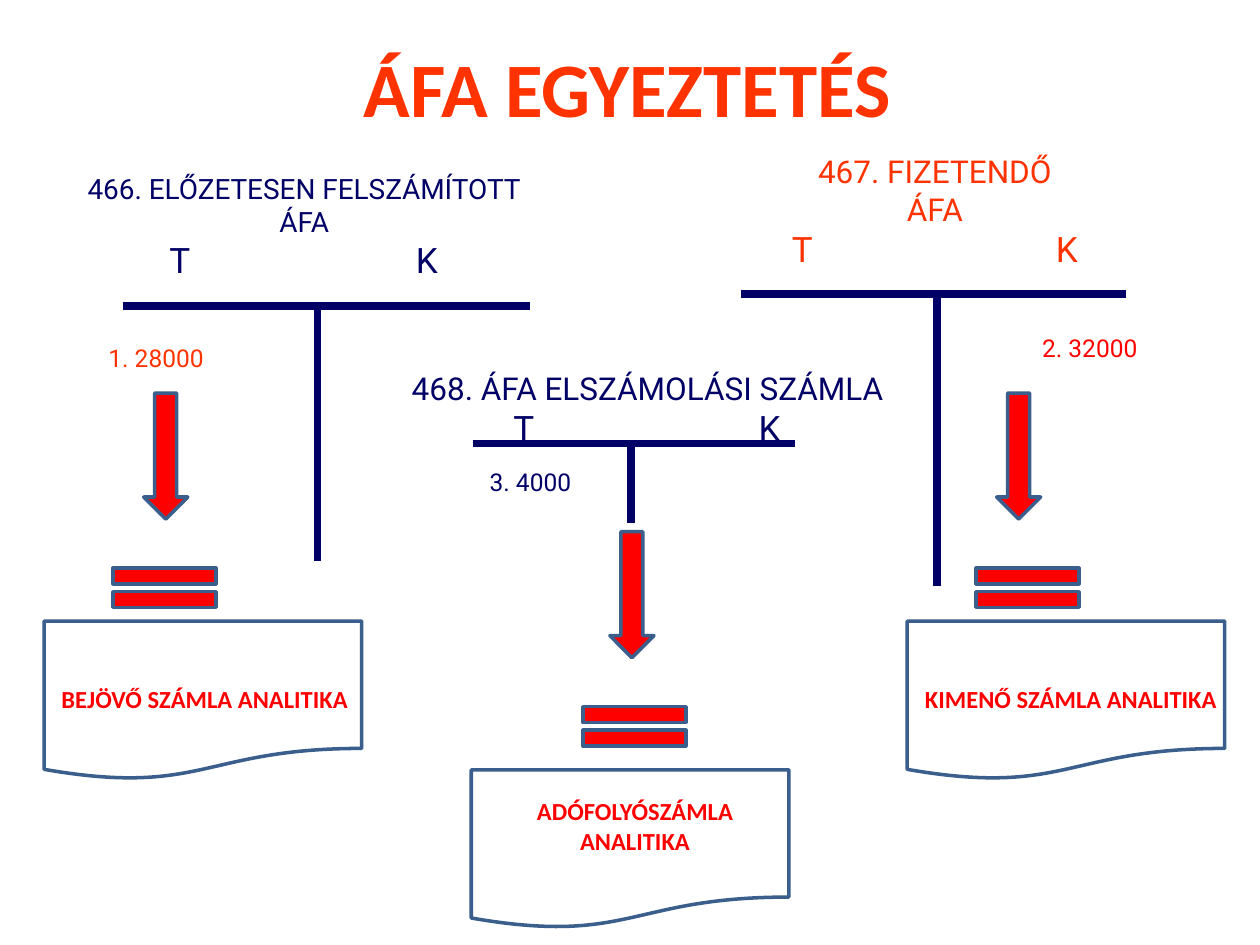
"""Build the VAT reconciliation slide with three T-accounts and their ledgers."""
from dataclasses import dataclass

from lxml.etree import SubElement
from pptx import Presentation
from pptx.dml.color import RGBColor
from pptx.enum.shapes import MSO_CONNECTOR as Connector, MSO_SHAPE as Shape
from pptx.enum.text import MSO_ANCHOR as Anchor, MSO_AUTO_SIZE as AutoSize, PP_ALIGN as Align
from pptx.oxml.ns import qn
from pptx.util import Emu, Inches, Pt

COLUMNS, ROWS = 100, 75
WIDTH, HEIGHT = Inches(10), Inches(7.5)
NAVY, ORANGE, RED, STEEL, WHITE = "000066", "FF3300", "FF0000", "3A5F8C", "FFFFFF"


@dataclass
class Area:
    """A rectangle in grid columns and rows."""
    left: float
    top: float
    width: float
    height: float


@dataclass
class Account:
    """A T-account: heading, side letters, bar and stem."""
    heading: str
    area: Area
    size: int
    color: str
    sides: tuple[float, float]
    bar: tuple[float, float]
    bar_row: float
    stem: float
    stem_end: float


@dataclass
class Entry:
    """An amount posted to an account."""
    text: str
    area: Area
    color: str


@dataclass
class Ledger:
    """A ledger document with the arrow and equals sign above it."""
    text: str
    text_area: Area
    left: float
    top: float
    arrow: float
    equals: float
    arrow_rise: float
    equals_rise: float


ACCOUNTS = [
    Account("466. ELŐZETESEN FELSZÁMÍTOTT\vÁFA", Area(4.3, 13.1, 39.7, 9.7), 16, NAVY,
            (9, 28.6), (9.8, 42.1), 24.3, 25.2, 44.5),
    Account("467. FIZETENDŐ\vÁFA", Area(59.4, 11.6, 29.6, 10.4), 18, ORANGE,
            (3.3, 24.3), (58.8, 89.4), 23.3, 74.4, 46.5),
    Account("468. ÁFA ELSZÁMOLÁSI SZÁMLA", Area(30, 28.8, 42.8, 7.3), 18, NAVY,
            (10.6, 30.1), (37.5, 63.1), 35.2, 50.1, 41.5),
]
ENTRIES = [
    Entry("1. 28000", Area(7.1, 26.7, 10.6, 3.3), ORANGE),
    Entry("2. 32000", Area(81.7, 25.9, 9.6, 3.4), RED),
    Entry("3. 4000", Area(37.4, 36.6, 9.4, 3.3), NAVY),
]
LEDGERS = [
    Ledger("BEJÖVŐ SZÁMLA ANALITIKA", Area(3.8, 53.8, 24.9, 3.4),
           3.5, 49.3, 11.4, 7.5, 18.1, 5.3),
    Ledger("KIMENŐ SZÁMLA ANALITIKA", Area(72.3, 53.8, 25.4, 3.4),
           72, 49.3, 79.1, 76, 18.1, 5.3),
    Ledger("ADÓFOLYÓSZÁMLA\vANALITIKA", Area(41.3, 62.7, 18.2, 5.7),
           37.4, 61.1, 48.4, 44.8, 18.9, 6.1),
]


def across(columns: float) -> Emu:
    """Convert grid columns to a length."""
    return Emu(round(WIDTH * columns / COLUMNS))


def down(rows: float) -> Emu:
    """Convert grid rows to a length."""
    return Emu(round(HEIGHT * rows / ROWS))


def frame(area: Area) -> tuple[Emu, Emu, Emu, Emu]:
    """Convert a grid area to left, top, width and height."""
    return across(area.left), down(area.top), across(area.width), down(area.height)


def color_of(value: str) -> RGBColor:
    """Turn a hex string into a colour."""
    return RGBColor.from_string(value)


def style(para, font: str, size: int, color: str, bold: bool = False) -> None:
    """Format every run of a paragraph."""
    for span in para.runs:
        span.font.name, span.font.size, span.font.bold = font, Pt(size), bold
        span.font.color.rgb = color_of(color)


def add_label(page, text: str, area: Area, font: str, size: int, color: str,
              bold: bool = False, wrap: bool = False):
    """Add a centred text box and return its frame."""
    text_frame = page.shapes.add_textbox(*frame(area)).text_frame
    text_frame.word_wrap = wrap
    text_frame.auto_size = AutoSize.SHAPE_TO_FIT_TEXT
    para = text_frame.paragraphs[0]
    para.text, para.alignment = text, Align.CENTER
    style(para, font, size, color, bold)
    return text_frame


def add_rule(page, start: tuple[float, float], end: tuple[float, float]) -> None:
    """Draw a thick navy account line."""
    rule = page.shapes.add_connector(Connector.STRAIGHT, across(start[0]), down(start[1]),
                                     across(end[0]), down(end[1]))
    rule.line.color.rgb, rule.line.width = color_of(NAVY), Pt(4.5)
    SubElement(rule._element.spPr, qn("a:effectLst"))


def add_figure(page, kind: Shape, area: Area, fill: str) -> None:
    """Draw a filled preset shape with a steel outline."""
    figure = page.shapes.add_shape(kind, *frame(area))
    figure.shadow.inherit = False
    figure.fill.solid()
    figure.fill.fore_color.rgb = color_of(fill)
    figure.line.color.rgb, figure.line.width = color_of(STEEL), Pt(2)


def add_account(page, account: Account) -> None:
    """Draw a T-account with its heading and tabbed side letters."""
    text_frame = add_label(page, account.heading, account.area, "Roboto",
                           account.size, account.color, wrap=True)
    para = text_frame.add_paragraph()
    para.text, para.alignment = "\tT\tK", Align.LEFT
    style(para, "Roboto", 20, account.color)
    tabs = SubElement(para._p.get_or_add_pPr(), qn("a:tabLst"))
    for side in account.sides:
        SubElement(tabs, qn("a:tab"), pos=str(across(side)), algn="ctr")
    first, last = account.bar
    add_rule(page, (first, account.bar_row), (last, account.bar_row))
    add_rule(page, (account.stem, account.bar_row), (account.stem, account.stem_end))


def add_ledger(page, ledger: Ledger) -> None:
    """Draw a ledger document, its equals sign, arrow and caption."""
    add_figure(page, Shape.FLOWCHART_DOCUMENT,
               Area(ledger.left, ledger.top, 25.2, 12.6), WHITE)
    add_figure(page, Shape.DOWN_ARROW,
               Area(ledger.arrow, ledger.top - ledger.arrow_rise, 3.5, 10), RED)
    add_figure(page, Shape.MATH_EQUAL,
               Area(ledger.equals, ledger.top - ledger.equals_rise, 11.1, 5.3), RED)
    add_label(page, ledger.text, ledger.text_area, "Calibri", 14, RED, bold=True)


def add_title(page, text: str) -> None:
    """Place and format the title placeholder."""
    title = page.shapes.title
    title.left, title.top, title.width, title.height = frame(Area(-0.2, 0.6, 100, 12.5))
    title.text_frame.text = text
    title.text_frame.vertical_anchor = Anchor.MIDDLE
    para = title.text_frame.paragraphs[0]
    para.alignment = Align.CENTER
    style(para, "Calibri", 44, ORANGE, bold=True)


def main() -> None:
    """Build and save the deck."""
    deck = Presentation()
    deck.slide_width, deck.slide_height = WIDTH, HEIGHT
    page = deck.slides.add_slide(deck.slide_layouts[5])
    add_title(page, "ÁFA EGYEZTETÉS")
    for account in ACCOUNTS:
        add_account(page, account)
    for entry in ENTRIES:
        add_label(page, entry.text, entry.area, "Roboto", 14, entry.color)
    for ledger in LEDGERS:
        add_ledger(page, ledger)
    deck.save("out.pptx")


if __name__ == "__main__":
    main()
